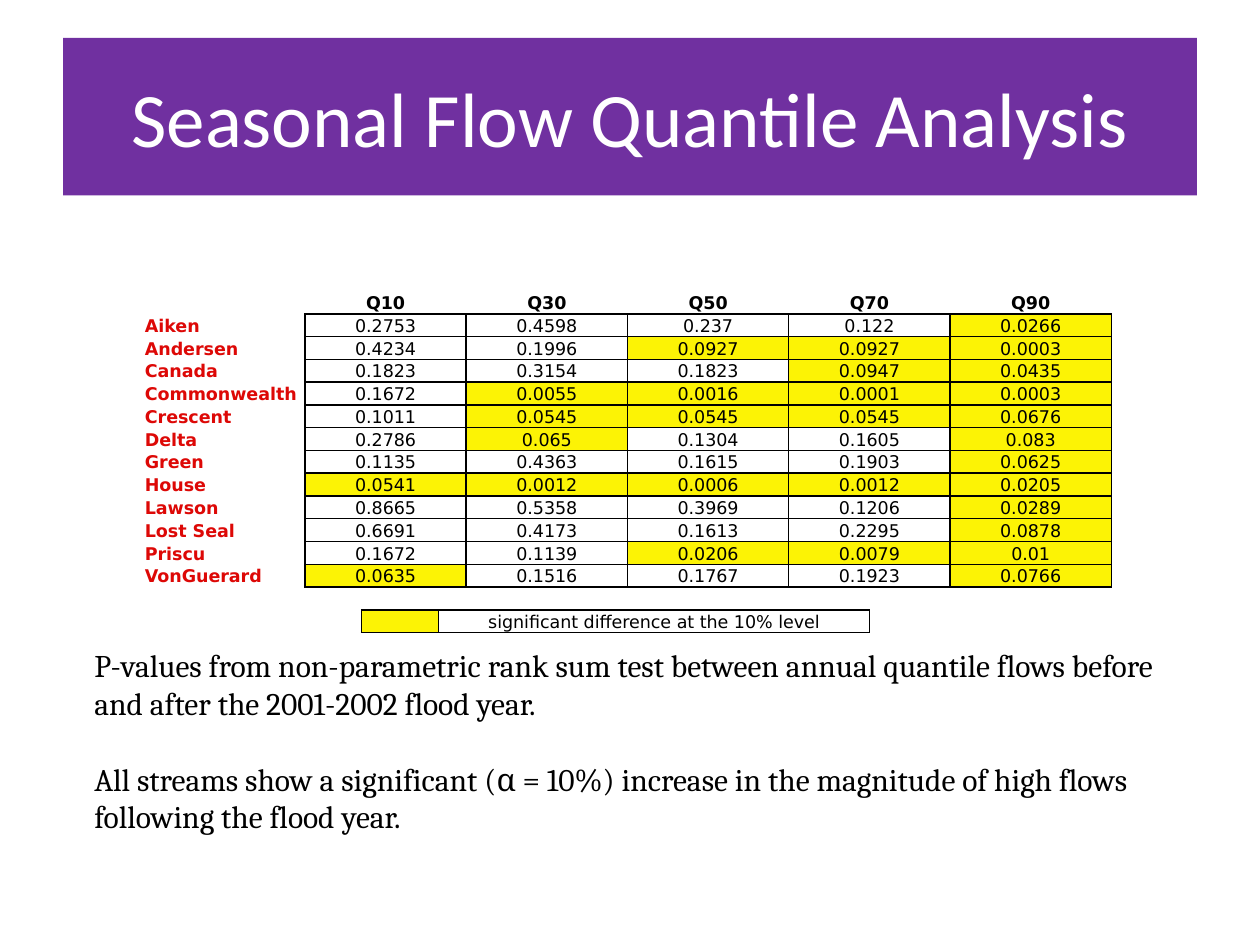
from lxml.etree import SubElement as Sub
from pptx import Presentation
from pptx.dml.color import RGBColor as RGB
from pptx.enum.text import MSO_ANCHOR as Anchor, PP_ALIGN as Align
from pptx.oxml.ns import qn
from pptx.util import Inches, Pt

BLACK, WHITE, RED = "000000", "FFFFFF", "DD0806"
YELLOW, PURPLE = "FCF305", "7030A0"
LEVEL = 0.1  # significance level that marks a cell yellow

HEADS = ["", "Q10", "Q30", "Q50", "Q70", "Q90"]
STREAMS = [
    ["Aiken", "0.2753", "0.4598", "0.237", "0.122", "0.0266"],
    ["Andersen", "0.4234", "0.1996", "0.0927", "0.0927", "0.0003"],
    ["Canada", "0.1823", "0.3154", "0.1823", "0.0947", "0.0435"],
    ["Commonwealth", "0.1672", "0.0055", "0.0016", "0.0001", "0.0003"],
    ["Crescent", "0.1011", "0.0545", "0.0545", "0.0545", "0.0676"],
    ["Delta", "0.2786", "0.065", "0.1304", "0.1605", "0.083"],
    ["Green", "0.1135", "0.4363", "0.1615", "0.1903", "0.0625"],
    ["House", "0.0541", "0.0012", "0.0006", "0.0012", "0.0205"],
    ["Lawson", "0.8665", "0.5358", "0.3969", "0.1206", "0.0289"],
    ["Lost Seal", "0.6691", "0.4173", "0.1613", "0.2295", "0.0878"],
    ["Priscu", "0.1672", "0.1139", "0.0206", "0.0079", "0.01"],
    ["VonGuerard", "0.0635", "0.1516", "0.1767", "0.1923", "0.0766"],
]
NOTES = [
    "P-values from non-parametric rank sum test between annual quantile "
    "flows before and after the 2001-2002 flood year.",
    "All streams show a significant (α = 10%) increase in the magnitude "
    "of high flows following the flood year.",
]


def color(code):
    return RGB.from_string(code)


def box(*sizes):
    return [Inches(size) for size in sizes]


class Deck:
    TITLE = {"name": "Calibri", "size": Pt(44), "bold": False}
    NOTE = {"name": "Cambria", "size": Pt(18), "bold": False}
    CELL = {"name": "DejaVu Sans", "size": Pt(10), "bold": False}

    def __init__(self, wide, high):
        self.show = Presentation()
        self.show.slide_width, self.show.slide_height = box(wide, high)
        self.slide = self.show.slides.add_slide(self.show.slide_layouts[5])

    def style(self, font, values, ink):
        for name, value in values.items():
            setattr(font, name, value)
        font.color.rgb = color(ink)

    def title(self, text, at):
        head = self.slide.shapes.title
        head.left, head.top, head.width, head.height = box(*at)
        head.fill.solid()
        head.fill.fore_color.rgb = color(PURPLE)
        frame = head.text_frame
        frame.text, frame.vertical_anchor = text, Anchor.MIDDLE
        para = frame.paragraphs[0]
        para.alignment = Align.CENTER
        self.style(para.runs[0].font, self.TITLE, WHITE)

    def text(self, lines, at, gap):
        frame = self.slide.shapes.add_textbox(*box(*at)).text_frame
        frame.word_wrap = True
        for num, line in enumerate(lines):
            para = frame.add_paragraph() if num else frame.paragraphs[0]
            if num:
                para.space_before = Pt(gap)
            run = para.add_run()
            run.text = line
            self.style(run.font, self.NOTE, BLACK)

    def table(self, rows, at, widths, look):
        """look(row, col, text) gives a dict of options for one cell."""
        size = len(rows), len(widths)
        grid = self.slide.shapes.add_table(*size, *box(*at)).table
        grid.first_row = grid.horz_banding = False
        for col, width in zip(grid.columns, widths):
            col.width = Inches(width)
        for r, row in enumerate(rows):
            grid.rows[r].height = Inches(at[3] / len(rows))
            for c, text in enumerate(row):
                self.cell(grid.cell(r, c), text, **look(r, c, text))

    def cell(self, cell, text, edges="LRTB", fill=None, ink=BLACK,
             bold=False, align=Align.CENTER):
        cell.margin_left = cell.margin_right = cell.margin_top = Inches(0.01)
        cell.margin_bottom = 0
        cell.vertical_anchor = Anchor.BOTTOM
        self.edge(cell, edges)
        if fill:
            cell.fill.solid()
            cell.fill.fore_color.rgb = color(fill)
        else:
            cell.fill.background()
        para = cell.text_frame.paragraphs[0]
        para.alignment = align
        if text:
            run = para.add_run()
            run.text = text
            self.style(run.font, {**self.CELL, "bold": bold}, ink)
        else:  # keeps an empty row from growing
            Sub(para._p, qn("a:endParaRPr"), sz="1000")

    def edge(self, cell, edges):
        props = cell._tc.get_or_add_tcPr()
        for side in "LRTB":
            line = Sub(props, qn("a:ln" + side), w=str(Pt(1)))
            if side in edges:
                paint = Sub(line, qn("a:solidFill"))
                Sub(paint, qn("a:srgbClr"), val=BLACK)
            else:
                Sub(line, qn("a:noFill"))


def flow(row, col, text):
    if row == 0:
        return {"edges": "B" if col else "", "bold": True}
    if col == 0:
        return {"edges": "R", "ink": RED, "bold": True, "align": Align.LEFT}
    return {"fill": YELLOW if float(text) < LEVEL else None}


def legend(row, col, text):
    return {"fill": None if col else YELLOW}


def main():
    deck = Deck(10, 7.5)
    deck.title("Seasonal Flow Quantile Analysis", (0.5, 0.3, 9, 1.25))

    # P-values by stream and quantile
    deck.table([HEADS] + STREAMS, (1.14, 2.31, 7.69, 2.35), [1.28] * 6, flow)

    # Explanation
    deck.text(NOTES, (0.65, 5.08, 8.67, 1.62), 21.6)

    # Key to the yellow cells
    key = ["", "significant difference at the 10% level"]
    deck.table([key], (2.87, 4.84, 4.03, 0.18), [0.61, 3.42], legend)

    deck.show.save("out.pptx")


if __name__ == "__main__":
    main()
